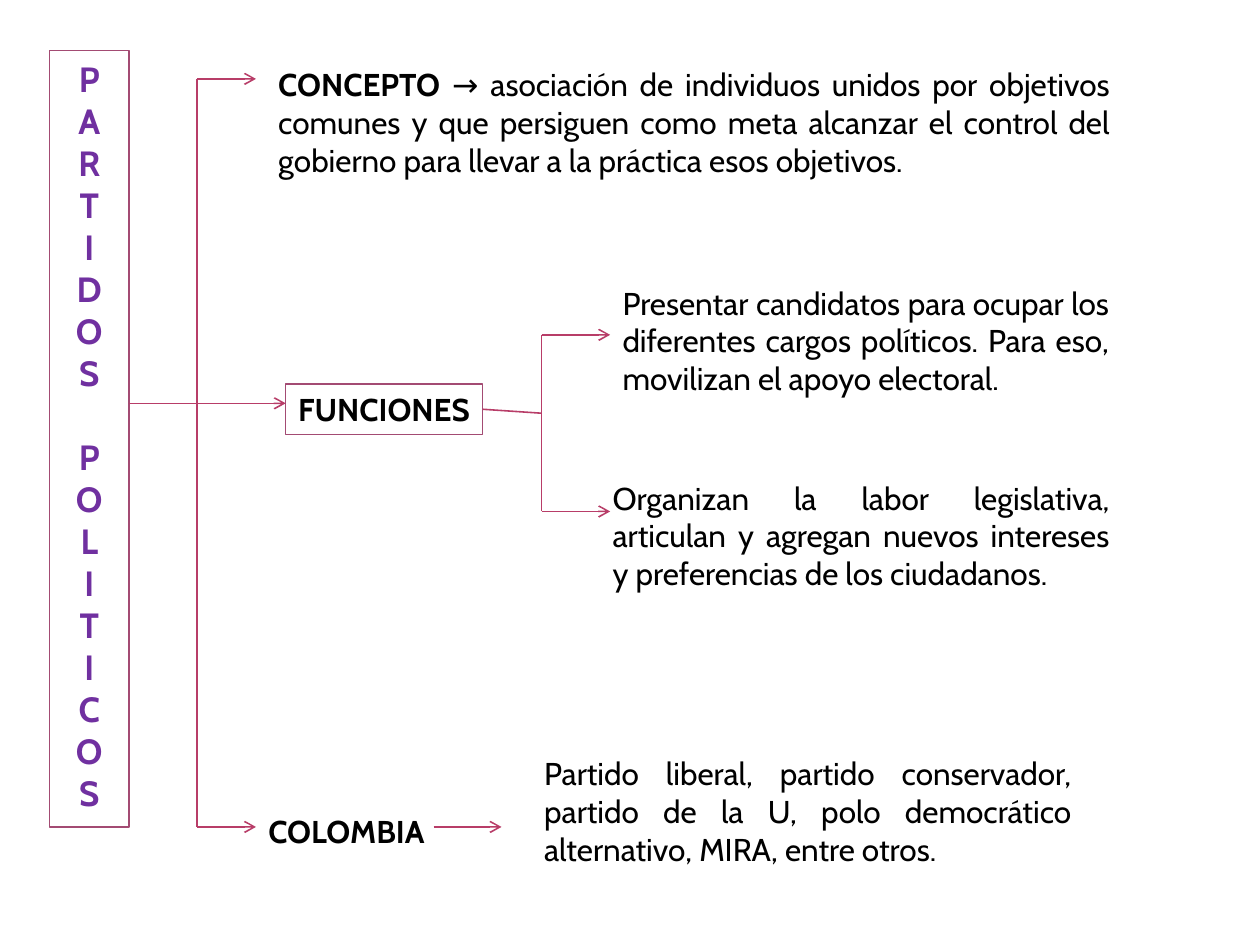
from lxml import etree
from pptx import Presentation
from pptx.dml.color import RGBColor
from pptx.enum.shapes import MSO_CONNECTOR, MSO_SHAPE
from pptx.enum.text import MSO_ANCHOR, PP_ALIGN
from pptx.oxml.ns import qn
from pptx.util import Cm, Pt

LINE, RECT = MSO_CONNECTOR.STRAIGHT, MSO_SHAPE.RECTANGLE
TOP = MSO_ANCHOR.TOP
LEFT, MID, JUST = PP_ALIGN.LEFT, PP_ALIGN.CENTER, PP_ALIGN.JUSTIFY
BLACK, PURPLE, EDGE, ROSE = "000000", "7030A0", "A34B73", "B83D68"
RIGHT = 3

# Lengths in cm: left, top, width, height
TITLE = ("PARTIDOS", "POLITICOS")
TITLE_BOX = (1, 1.02, 1.6, 15.65)
ROLES = ("FUNCIONES", (5.76, 7.74, 3.97, 1.02))
# Each text is a list of (words, bold)
TEXTS = [
    ([("CONCEPTO ", True),
      ("→ asociación de individuos unidos por objetivos comunes y que "
       "persiguen como meta alcanzar el control del gobierno para llevar a "
       "la práctica esos objetivos.", False)],
     (5.36, 1.19, 17.27, 3.33), JUST),
    ([("Presentar candidatos para ocupar los diferentes cargos políticos. "
       "Para eso, movilizan el apoyo electoral.\u00a0", False)],
     (12.3, 5.59, 10.31, 3.33), JUST),
    ([("Organizan la labor legislativa, articulan y agregan nuevos intereses "
       "y preferencias de los ciudadanos.", False)],
     (12.1, 9.52, 10.52, 3.33), JUST),
    ([("COLOMBIA", True)], (5.16, 16.23, 4.57, 1.02), LEFT),
    ([("Partido liberal, partido conservador, partido de la U, polo "
       "democrático alternativo, MIRA, entre otros.", False)],
     (10.72, 15.08, 11.13, 2.57), JUST),
]

# Trunks of the two brackets: x, then the heights of their branches
MAIN, MAIN_TOP, MAIN_MID, MAIN_END = 3.97, 1.59, 8.13, 16.67
SUB, SUB_TOP, SUB_MID, SUB_END = 10.92, 6.75, 8.33, 10.31
# x1, y1, x2, y2, arrowhead
LINES = [
    (TITLE_BOX[0] + TITLE_BOX[2], MAIN_MID, MAIN, MAIN_MID, False),
    (MAIN, MAIN_TOP, MAIN, MAIN_END, False),
    (MAIN, MAIN_TOP, 5.16, MAIN_TOP, True),
    (MAIN, MAIN_MID, ROLES[1][0], MAIN_MID, True),
    (MAIN, MAIN_END, 5.16, MAIN_END, True),
    (SUB, SUB_TOP, SUB, SUB_END, False),
    (SUB, SUB_TOP, 12.3, SUB_TOP, True),
    (SUB, SUB_END, 12.3, SUB_END, True),
    (8.74, MAIN_END, 10.11, MAIN_END, True),
]


def rgb(code):
    return RGBColor.from_string(code)


def write(para, text, size=18, color=BLACK, bold=False, align=LEFT):
    para.alignment = align
    run = para.add_run()
    run.text = text
    font = run.font
    font.name, font.size, font.bold = "Cabin", Pt(size), bold
    font.color.rgb = rgb(color)


def prep(shape, wrap=True):
    """Set wrapping, top anchor and standard insets; return the frame."""
    frame = shape.text_frame
    frame.word_wrap = wrap
    frame.vertical_anchor = TOP
    frame.margin_left = frame.margin_right = Cm(0.25)
    frame.margin_top = frame.margin_bottom = Cm(0.13)
    return frame


def edge(shape):
    shape.fill.background()
    shape.line.color.rgb = rgb(EDGE)
    shape.line.width = Pt(0.75)


def draw(slide, x1, y1, x2, y2, arrow=False):
    line = slide.shapes.add_connector(LINE, Cm(x1), Cm(y1), Cm(x2), Cm(y2))
    line.line.color.rgb = rgb(ROSE)
    line.line.width = Pt(0.9)
    if arrow:
        tail = etree.SubElement(line.line._get_or_add_ln(), qn("a:tailEnd"))
        tail.set("type", "arrow")
    etree.SubElement(line._element.spPr, qn("a:effectLst"))
    return line


def main():
    deck = Presentation()
    deck.slide_width, deck.slide_height = Cm(25.4), Cm(19.05)
    slide = deck.slides.add_slide(deck.slide_layouts[5])

    title = slide.shapes.title
    title.left, title.top, title.width, title.height = map(Cm, TITLE_BOX)
    edge(title)
    frame = prep(title)
    para = frame.paragraphs[0]
    for w, word in enumerate(TITLE):
        for i, char in enumerate(word):
            if w or i:
                para = frame.add_paragraph()
            if w and not i:
                para.space_before = Pt(24)
            write(para, char, size=20, color=PURPLE, bold=True, align=MID)

    for row in LINES:
        draw(slide, *row)

    name, place = ROLES
    roles = slide.shapes.add_shape(RECT, *map(Cm, place))
    roles.shadow.inherit = False
    edge(roles)
    write(prep(roles, wrap=False).paragraphs[0], name, bold=True)
    stem = draw(slide, place[0] + place[2], SUB_MID, SUB, SUB_MID)
    stem.begin_connect(roles, RIGHT)

    for runs, place, align in TEXTS:
        box = slide.shapes.add_textbox(*map(Cm, place))
        para = prep(box).paragraphs[0]
        for text, bold in runs:
            write(para, text, bold=bold, align=align)

    deck.save("out.pptx")


if __name__ == "__main__":
    main()
